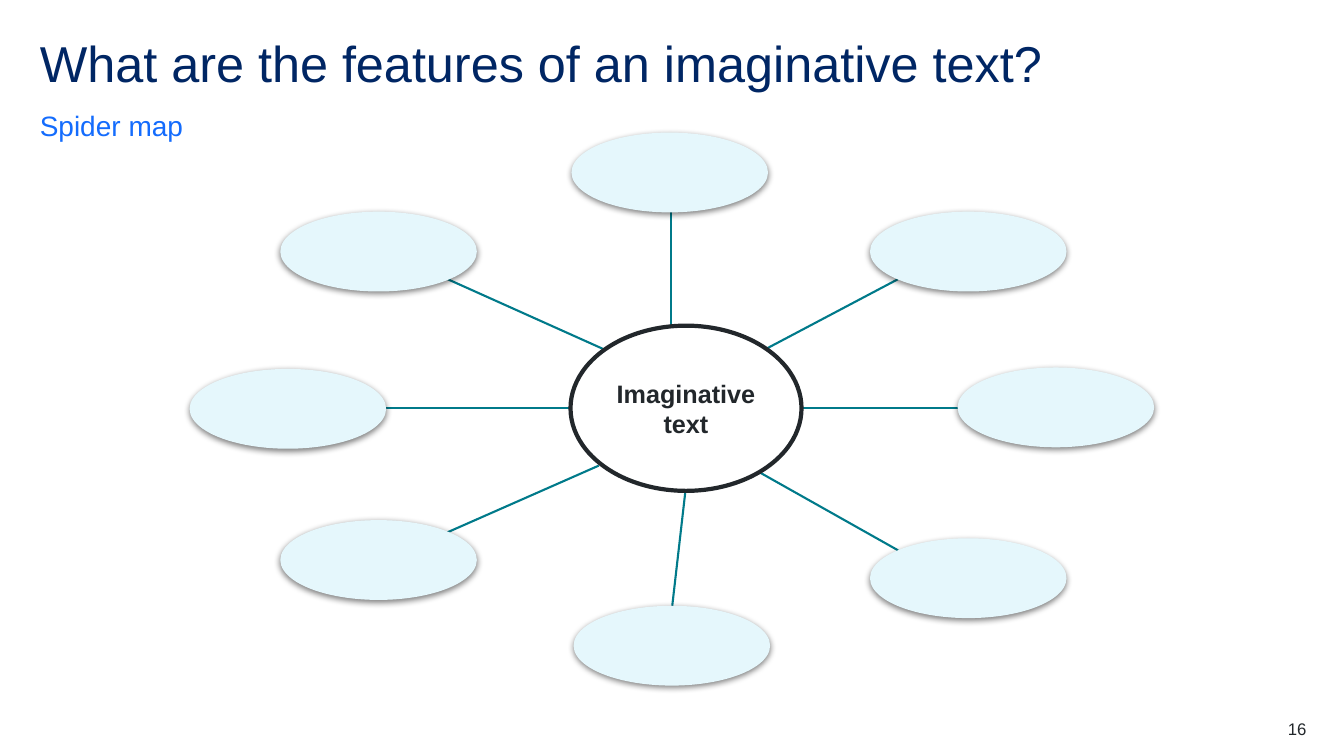
from lxml import etree
from pptx import Presentation
from pptx.dml.color import RGBColor
from pptx.enum import shapes, text
from pptx.oxml import ns, parse_xml
from pptx.util import Pt

COLORS = {
    "title": "002664",
    "subtitle": "146CFD",
    "ink": "22272B",
    "leg": "007A8A",
    "bubble": "E5F7FC",
    "hub": "FFFFFF",
}
BUBBLE_WIDTH, BUBBLE_HEIGHT = 140.4, 57
SHADOW = (
    f'<a:outerShdw {ns.nsdecls("a")} blurRad="57150" dist="19050" dir="5400000" '
    'algn="ctr" rotWithShape="0"><a:srgbClr val="000000">'
    '<a:alpha val="50000"/></a:srgbClr></a:outerShdw>'
)


def write(shape, wording, size, color, align, anchor, bold=False):
    frame = shape.text_frame
    frame.word_wrap = True
    frame.vertical_anchor = anchor
    para = frame.paragraphs[0]
    para.text = wording
    para.alignment = align
    para.font.name = "Arial"
    para.font.size = Pt(size)
    para.font.bold = bold
    para.font.color.rgb = RGBColor.from_string(COLORS[color])
    return para


def add_label(box, wording, size, color, align, anchor):
    label = page.shapes.add_textbox(*map(Pt, box))
    frame = label.text_frame
    frame.margin_left = frame.margin_right = 0
    frame.margin_top = frame.margin_bottom = 0
    return write(label, wording, size, color, align, anchor)


deck = Presentation()
deck.slide_width, deck.slide_height = Pt(960), Pt(540)
page = deck.slides.add_slide(deck.slide_layouts[6])
LEFT, CENTER, RIGHT = text.PP_ALIGN.LEFT, text.PP_ALIGN.CENTER, text.PP_ALIGN.RIGHT
TOP, MIDDLE, BOTTOM = text.MSO_ANCHOR.TOP, text.MSO_ANCHOR.MIDDLE, text.MSO_ANCHOR.BOTTOM

# Title and subtitle
title = add_label((28.4, 28.1, 904, 43), "What are the features of an imaginative text?",
                  36, "title", LEFT, TOP)
title.line_spacing = 0.9
subtitle = add_label((28.4, 77, 904, 24.5), "Spider map", 20, "subtitle", LEFT, BOTTOM)
subtitle.line_spacing = 1.5
subtitle.space_after = Pt(12)

# Legs: hub end, then bubble end
legs = [
    (479.5, 234, 479.5, 151.2),
    (536.4, 254.9, 641.5, 199.4),
    (552.2, 291.6, 684, 291.6),
    (532.8, 331.9, 641.5, 393.1),
    (489.6, 350.6, 480.2, 432.7),
    (427.7, 332.6, 319.7, 380.2),
    (407.5, 291.6, 275.8, 291.6),
    (432, 249.8, 319.7, 199.4),
]
for ends in legs:
    leg = page.shapes.add_connector(shapes.MSO_CONNECTOR.STRAIGHT, *map(Pt, ends))
    leg.line.color.rgb = RGBColor.from_string(COLORS["leg"])
    leg.line.width = Pt(1.5)
    etree.SubElement(leg._element.spPr, ns.qn("a:effectLst"))

# Empty bubbles, clockwise from the top
bubbles = [
    (408.2, 94.7), (621.4, 151.2), (684, 262.5), (621.4, 384.5),
    (409.7, 432.7), (200.2, 371.5), (135.4, 263.5), (200.2, 151.2),
]
for left, top in bubbles:
    bubble = page.shapes.add_shape(shapes.MSO_SHAPE.OVAL, Pt(left), Pt(top),
                                   Pt(BUBBLE_WIDTH), Pt(BUBBLE_HEIGHT))
    bubble.fill.solid()
    bubble.fill.fore_color.rgb = RGBColor.from_string(COLORS["bubble"])
    bubble.line.fill.background()
    bubble.shadow.inherit = False
    bubble._element.spPr.find(ns.qn("a:effectLst")).append(parse_xml(SHADOW))

# Hub
hub = page.shapes.add_shape(shapes.MSO_SHAPE.OVAL, Pt(407.5), Pt(232.6), Pt(165), Pt(118))
hub.shadow.inherit = False
hub.fill.solid()
hub.fill.fore_color.rgb = RGBColor.from_string(COLORS["hub"])
hub.line.color.rgb = RGBColor.from_string(COLORS["ink"])
hub.line.width = Pt(3)
write(hub, "Imaginative text", 18, "ink", CENTER, MIDDLE, bold=True)

# Page number
add_label((876.2, 513.4, 57, 14.4), "16", 12, "ink", RIGHT, TOP)

deck.save("out.pptx")
